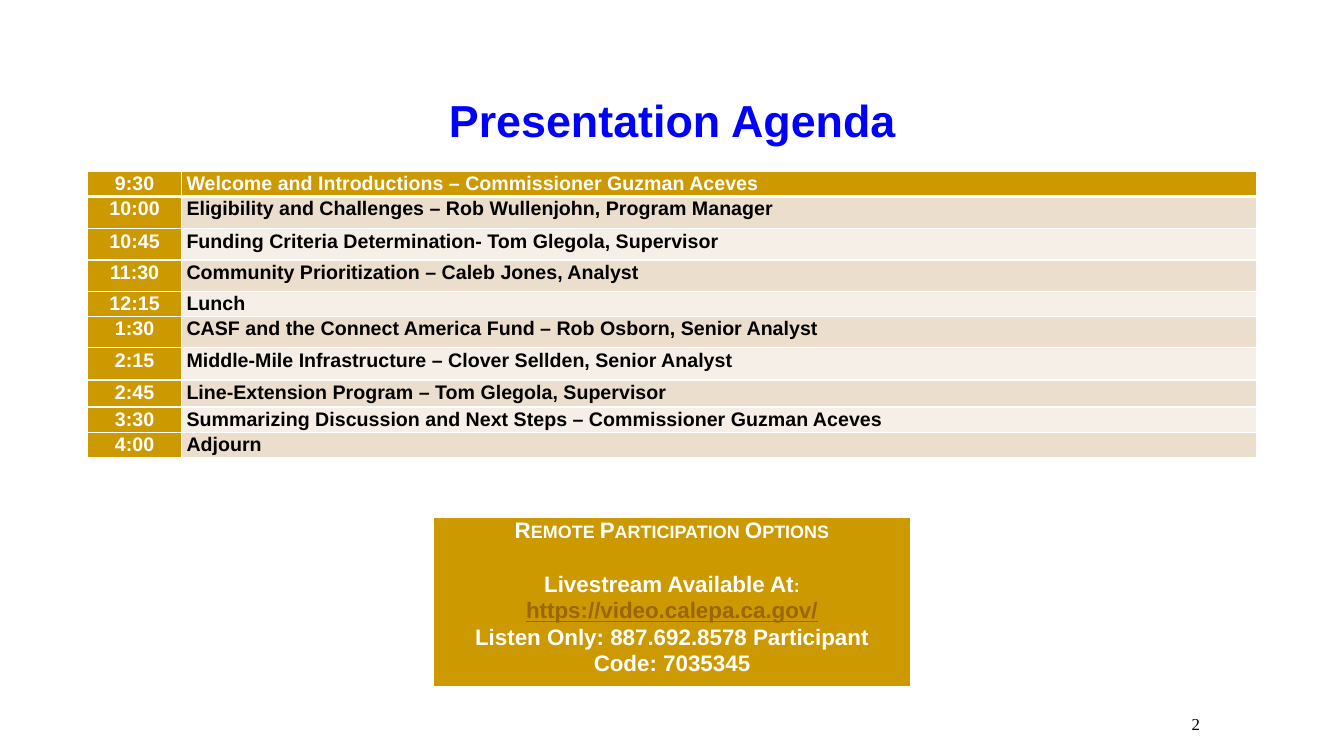
from dataclasses import dataclass

from lxml import etree
from pptx import Presentation
from pptx import util as u
from pptx.dml.color import RGBColor
from pptx.enum import text
from pptx.oxml import ns

PX = 9144  # EMU in one px, 100 px to the inch
GOLD, WHITE, BLACK = "CC9900", "FFFFFF", "000000"
BANDS = ("F6EFE7", "ECDECC")
CENTER, LEFT, RIGHT = (text.PP_ALIGN.CENTER, text.PP_ALIGN.LEFT,
                       text.PP_ALIGN.RIGHT)


@dataclass
class Piece:
    words: str
    color: str = WHITE
    size: int = 14
    bold: bool = True
    font: str = "Arial"
    small_caps: bool = False
    underline: bool = False


@dataclass
class AgendaItem:
    time: str
    topic: str
    height: int


AGENDA = [
    AgendaItem("9:30", "Welcome and Introductions – Commissioner Guzman Aceves", 19),
    AgendaItem("10:00", "Eligibility and Challenges – Rob Wullenjohn, Program Manager", 32),
    AgendaItem("10:45", "Funding Criteria Determination- Tom Glegola, Supervisor", 31),
    AgendaItem("11:30", "Community Prioritization – Caleb Jones, Analyst", 31),
    AgendaItem("12:15", "Lunch", 16),
    AgendaItem("1:30", "CASF and the Connect America Fund – Rob Osborn, Senior Analyst", 31),
    AgendaItem("2:15", "Middle-Mile Infrastructure – Clover Sellden, Senior Analyst", 32),
    AgendaItem("2:45", "Line-Extension Program – Tom Glegola, Supervisor", 27),
    AgendaItem("3:30", "Summarizing Discussion and Next Steps – Commissioner Guzman Aceves", 17),
    AgendaItem("4:00", "Adjourn", 20),
]

REMOTE_OPTIONS = [
    [Piece("Remote Participation Options", size=16, small_caps=True)],
    [Piece("Livestream Available At", size=16),
     Piece(": ", size=16, small_caps=True),
     Piece("https://video.calepa.ca.gov/", "996600", 16, underline=True)],
    [Piece("Listen Only: 887.692.8578 Participant Code: 7035345", size=16)],
]


def rgb(color: str) -> RGBColor:
    return RGBColor.from_string(color)


def apply(target, values: dict) -> None:
    for name, value in values.items():
        setattr(target, name, value)


def write(paragraph, pieces: list[Piece], align, spacing: float = 1.0) -> None:
    apply(paragraph, {"alignment": align, "line_spacing": spacing})
    for piece in pieces:
        run = paragraph.add_run()
        run.text = piece.words
        apply(run.font, {"name": piece.font, "size": u.Pt(piece.size),
                         "bold": piece.bold, "underline": piece.underline})
        run.font.color.rgb = rgb(piece.color)
        if piece.small_caps:
            run._r.get_or_add_rPr().set("cap", "small")


def add_text(slide, box: tuple, piece: Piece, align, anchor) -> None:
    frame = slide.shapes.add_textbox(*(n * PX for n in box)).text_frame
    apply(frame, {"word_wrap": True, "vertical_anchor": anchor})
    write(frame.paragraphs[0], [piece], align)


def add_table(slide, box: tuple, columns: list[int], rows: list[int]):
    table = slide.shapes.add_table(
        len(rows), len(columns), *(n * PX for n in box)).table
    for column, width in zip(table.columns, columns):
        column.width = width * PX
    for row, height in zip(table.rows, rows):
        row.height = height * PX
    return table


def format_cell(cell, fill: str, margin: int, top: int = 1, bottom: int = 1) -> None:
    apply(cell, {"margin_left": margin * PX, "margin_right": margin * PX,
                 "margin_top": 0, "margin_bottom": 0})
    # White borders come before the fill in the cell properties
    properties = cell._tc.get_or_add_tcPr()
    for side, points in (("L", 1), ("R", 1), ("T", top), ("B", bottom)):
        line = etree.SubElement(properties, ns.qn(f"a:ln{side}"), w=str(u.Pt(points)))
        solid = etree.SubElement(line, ns.qn("a:solidFill"))
        etree.SubElement(solid, ns.qn("a:srgbClr"), val=WHITE)
    cell.fill.solid()
    cell.fill.fore_color.rgb = rgb(fill)


def add_agenda(slide) -> None:
    table = add_table(slide, (87, 170, 1159, 279), [93, 1066],
                      [item.height for item in AGENDA])
    for index, item in enumerate(AGENDA):
        header = index == 0
        top, bottom = 3 if index == 1 else 1, 3 if header else 1
        time, topic = table.cell(index, 0), table.cell(index, 1)
        format_cell(time, GOLD, 5, top, bottom)
        format_cell(topic, GOLD if header else BANDS[index % 2], 5, top, bottom)
        write(time.text_frame.paragraphs[0], [Piece(item.time)], CENTER, 1.07)
        write(topic.text_frame.paragraphs[0],
              [Piece(item.topic, WHITE if header else BLACK)], LEFT, 1.07)


def add_remote_options(slide) -> None:
    cell = add_table(slide, (430, 513, 473, 168), [473], [168]).cell(0, 0)
    format_cell(cell, GOLD, 7, bottom=3)
    frame = cell.text_frame
    for index, pieces in enumerate(REMOTE_OPTIONS):
        paragraph = frame.add_paragraph() if index else frame.paragraphs[0]
        write(paragraph, pieces, CENTER, 1.07)
    frame.paragraphs[1].space_before = u.Pt(19)


def main() -> None:
    presentation = Presentation()
    apply(presentation, {"slide_width": 1333 * PX, "slide_height": 750 * PX})
    slide = presentation.slides.add_slide(presentation.slide_layouts[6])

    # Title and page number
    add_text(slide, (67, 83, 1200, 72), Piece("Presentation Agenda", "0000FF", 32),
             CENTER, text.MSO_ANCHOR.MIDDLE)
    add_text(slide, (956, 683, 244, 50),
             Piece("2", BLACK, 12, False, "Times New Roman"),
             RIGHT, text.MSO_ANCHOR.BOTTOM)

    # Tables
    add_agenda(slide)
    add_remote_options(slide)

    presentation.save("out.pptx")


if __name__ == "__main__":
    main()
